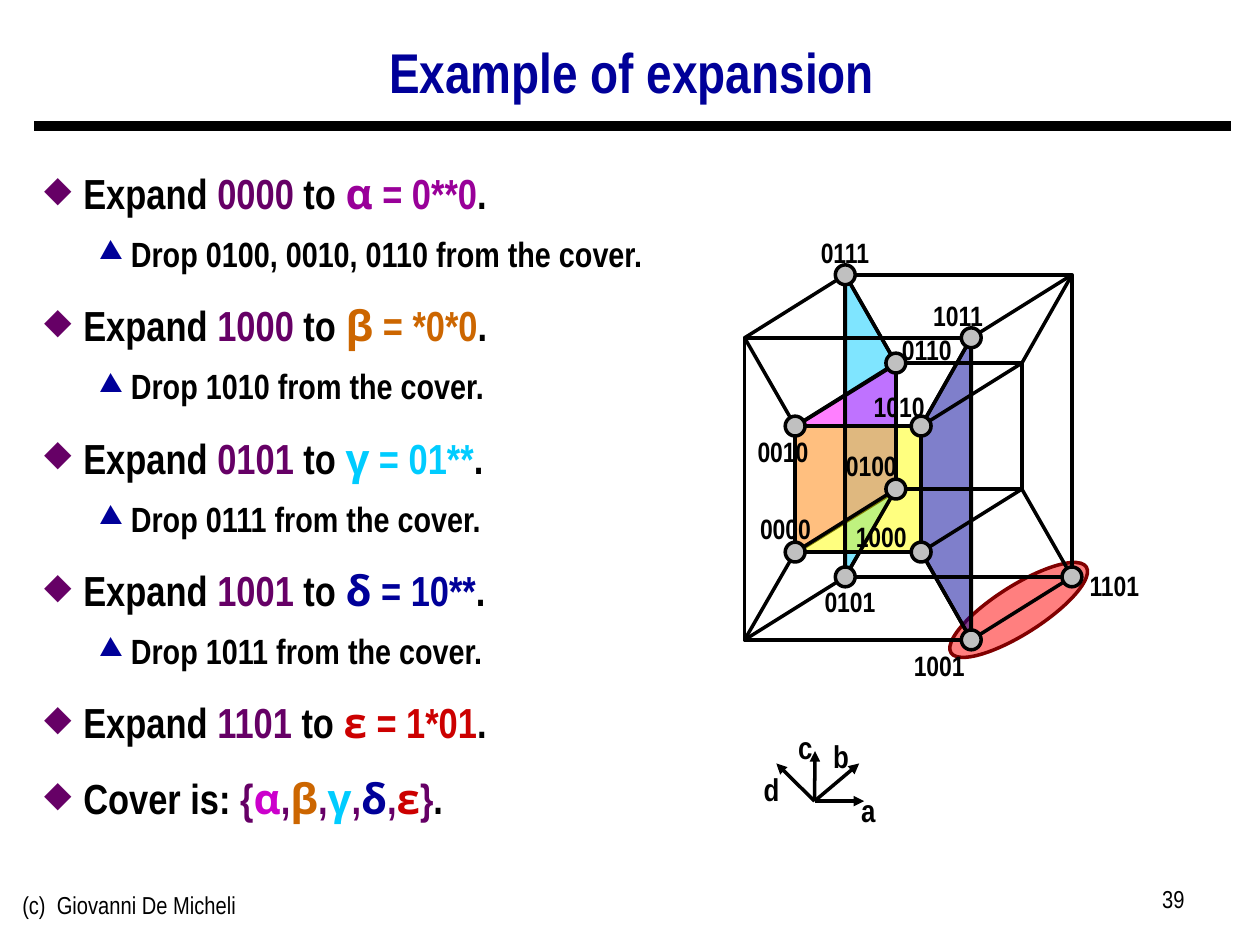
import itertools

import lxml.etree
import pptx
import pptx.dml.color
import pptx.enum.shapes
import pptx.enum.text
import pptx.oxml.ns
import pptx.util

Cm, Pt = pptx.util.Cm, pptx.util.Pt
qn = pptx.oxml.ns.qn
Kind = pptx.enum.shapes.MSO_SHAPE
Align = pptx.enum.text.PP_ALIGN
Fit = pptx.enum.text.MSO_AUTO_SIZE

INK = {
    "black": "000000", "navy": "000099", "plum": "660066", "purple": "990099",
    "pink": "CC00CC", "orange": "CC6600", "cyan": "00CCFF", "red": "CC0000",
    "magenta": "FF00FF", "yellow": "FFFF00", "scarlet": "FF0000",
    "maroon": "800000", "grey": "C0C0C0",
}
GREEK = "αβγδε"
ITEMS = [
    ("0000", "α", "0**0", "purple", "0100, 0010, 0110"),
    ("1000", "β", "*0*0", "orange", "1010"),
    ("0101", "γ", "01**", "cyan", "0111"),
    ("1001", "δ", "10**", "navy", "1011"),
    ("1101", "ε", "1*01", "red", None),
]
COVER = ["pink", "orange", "cyan", "navy", "red"]
LABELS = {
    "1001": (18.16, 12.95), "0111": (16.26, 4.62), "1011": (18.54, 5.89),
    "0110": (17.91, 6.58), "0010": (15.01, 8.64), "0000": (15.06, 10.19),
    "0101": (16.36, 11.66), "1101": (21.69, 11.33), "0100": (16.79, 8.92),
    "1010": (17.35, 7.72), "1000": (16.99, 10.34),
}
AXES = [
    ("a", 17.42, 16.15, 17.09, 15.82), ("b", 17.32, 15.39, 16.54, 14.73),
    ("c", 16.43, 15.14, 15.82, 14.55), ("d", 15.65, 15.39, 15.14, 15.39),
]


def tint(name):
    """Return the named colour."""
    return pptx.dml.color.RGBColor.from_string(INK[name])


def spot(code):
    """Return the place of a hypercube corner from its bits a, b, c, d."""
    right, back, up, outer = (bit == "1" for bit in code)
    left, width, top, high = (15.01, 4.57, 6.81, 6.09) if outer else (16.03, 2.54, 8.59, 2.54)
    return left + width * right + 2.03 * back, top + high * (not up) - 1.27 * back


def put(para, text, size=24, ink="black", face="Arial Narrow", bold=True):
    """Add a run of text to a paragraph."""
    run = para.add_run()
    run.text = text
    font = run.font
    font.size, font.name, font.bold = Pt(size), face, bold
    font.color.rgb = tint(ink)


class Page:
    """Hold the line style and the current slide."""

    def __init__(self, slide, width=2):
        """Keep the slide and the usual line width."""
        self.slide, self.width = slide, width

    def text(self, box, text="", align=Align.LEFT, wrap=True, **form):
        """Add a text box and return its frame."""
        frame = self.slide.shapes.add_textbox(*map(Cm, box)).text_frame
        frame.word_wrap = wrap
        if not wrap:
            frame.auto_size = Fit.SHAPE_TO_FIT_TEXT
        para = frame.paragraphs[0]
        para.alignment = align
        if text:
            put(para, text, **form)
        return frame

    def bullet(self, para, runs, sub=False):
        """Fill a bulleted paragraph with (text, ink) runs."""
        para.line_spacing = 1.1 if sub else 1.25
        props = para._p.get_or_add_pPr()
        props.set("marL", str(Cm(1.75 if sub else 0.79)))
        props.set("indent", str(-Cm(0.64 if sub else 0.79)))
        if sub:
            para.level = 1

        def add(root, tag, **values):
            return lxml.etree.SubElement(root, qn("a:" + tag), **values)

        add(add(props, "spcBef"), "spcPct", val="30000")
        add(add(props, "buClr"), "srgbClr", val=INK["navy" if sub else "plum"])
        add(props, "buSzPct", val="75000" if sub else "85000")
        add(props, "buChar", char="▲" if sub else "◆")
        for text, ink in runs:
            face = "Open Sans" if text in GREEK else "Arial Narrow"
            put(para, text, size=20 if sub else 24, ink=ink, face=face)

    def paint(self, shape, fill=None, line="black", clear=False):
        """Set the fill and line of a shape."""
        shape.shadow.inherit = False
        shape.line.color.rgb = tint(line)
        shape.line.width = Pt(self.width)
        if fill is None:
            shape.fill.background()
            return
        shape.fill.solid()
        shape.fill.fore_color.rgb = tint(fill)
        if clear:
            shade = next(shape._element.spPr.iter(qn("a:srgbClr")))
            lxml.etree.SubElement(shade, qn("a:alpha"), val="50000")

    def shape(self, kind, box, turn=0, **style):
        """Add a preset shape."""
        shape = self.slide.shapes.add_shape(kind, *map(Cm, box))
        shape.rotation = turn
        self.paint(shape, **style)
        return shape

    def face(self, codes, fill):
        """Add a clear polygon through the given corners."""
        first, *rest = [tuple(map(Cm, spot(code))) for code in codes]
        build = self.slide.shapes.build_freeform(*first)
        build.add_line_segments(rest, close=True)
        self.paint(build.convert_to_shape(), fill, clear=True)

    def line(self, start, end, width=None, arrow=False):
        """Add a straight line, with an arrowhead if asked."""
        link = self.slide.shapes.add_connector(
            pptx.enum.shapes.MSO_CONNECTOR.STRAIGHT, *map(Cm, (*start, *end)))
        link.line.color.rgb = tint("black")
        link.line.width = Pt(width or self.width)
        if arrow:
            lxml.etree.SubElement(link.line._get_or_add_ln(), qn("a:tailEnd"), type="triangle")
        lxml.etree.SubElement(link._element.spPr, qn("a:effectLst"))


def write(page):
    """Add the title, list and footer."""
    page.line((0.69, 2.54), (24.82, 2.54), width=6)
    page.text((0.2, 17.81, 8.05, 1.32), "(c)  Giovanni De Micheli", size=14, bold=False)
    page.text((18.21, 17.7, 5.92, 1.32), "39", Align.RIGHT, size=14, bold=False)
    title = page.text((0.66, 0.56, 24.16, 1.91), "Example of expansion",
                      Align.CENTER, size=32, ink="navy")
    title.vertical_anchor = pptx.enum.text.MSO_ANCHOR.MIDDLE
    title.paragraphs[0].line_spacing = 0.9

    rows = []
    for code, name, cube, ink, drop in ITEMS:
        rows.append(([("Expand ", "black"), (code, "plum"), (" to ", "black"),
                      (name, ink), (" = " + cube, ink), (".", "black")], False))
        if drop:
            rows.append(([(f"Drop {drop} from the cover.", "black")], True))
    cover = [("Cover is: ", "black")]
    for mark, name, ink in zip("{,,,,", GREEK, COVER):
        cover += [(mark, "plum"), (name, ink)]
    rows.append((cover + [("}", "plum"), (".", "black")], False))

    body = page.text((0.64, 3, 24.16, 14.45))
    for num, (runs, sub) in enumerate(rows):
        page.bullet(body.add_paragraph() if num else body.paragraphs[0], runs, sub)


def draw(page):
    """Add the axes and the hypercube with its cover."""
    for name, left, top, *_ in AXES:
        page.line((16.42, 16.15), (left, top), arrow=True)
    for name, _, _, left, top in AXES:
        page.text((left, top, 0.83, 1.02), name, Align.CENTER, False, size=18)

    page.face(["0101", "0100", "0110", "0111"], "cyan")
    slant = page.shape(Kind.PARALLELOGRAM, (15.14, 8.23, 3.81, 2.03), 90,
                       fill="magenta", clear=True)
    slant.adjustments[0] = 0.62
    slant._element.spPr.find(qn("a:xfrm")).set("flipH", "1")
    page.shape(Kind.RECTANGLE, (*spot("0010"), 2.54, 2.54), fill="yellow", clear=True)
    page.shape(Kind.OVAL, (18.92, 11.81, 3.23, 0.97), 327.6,
               fill="scarlet", line="maroon", clear=True)
    page.face(["1001", "1000", "1010", "1011"], "navy")

    for back, outer in itertools.product("01", repeat=2):
        left, top = spot(f"0{back}1{outer}")
        right, base = spot(f"1{back}0{outer}")
        page.shape(Kind.RECTANGLE, (left, top, right - left, base - top))
    for a, c, bit in itertools.product("01", repeat=3):
        page.line(spot(f"{a}0{c}{bit}"), spot(f"{a}1{c}{bit}"))
        page.line(spot(f"{a}{bit}{c}0"), spot(f"{a}{bit}{c}1"))

    for code in LABELS:
        left, top = spot(code)
        page.shape(Kind.OVAL, (left - 0.2, top - 0.2, 0.4, 0.4), fill="grey")
    for code, place in LABELS.items():
        page.text((*place, 1.55, 0.94), code, Align.CENTER, False, size=16)


def main():
    """Build and save the deck."""
    deck = pptx.Presentation()
    deck.slide_width, deck.slide_height = Cm(25.4), Cm(19.05)
    page = Page(deck.slides.add_slide(deck.slide_layouts[6]))
    write(page)
    draw(page)
    deck.save("out.pptx")


if __name__ == "__main__":
    main()
